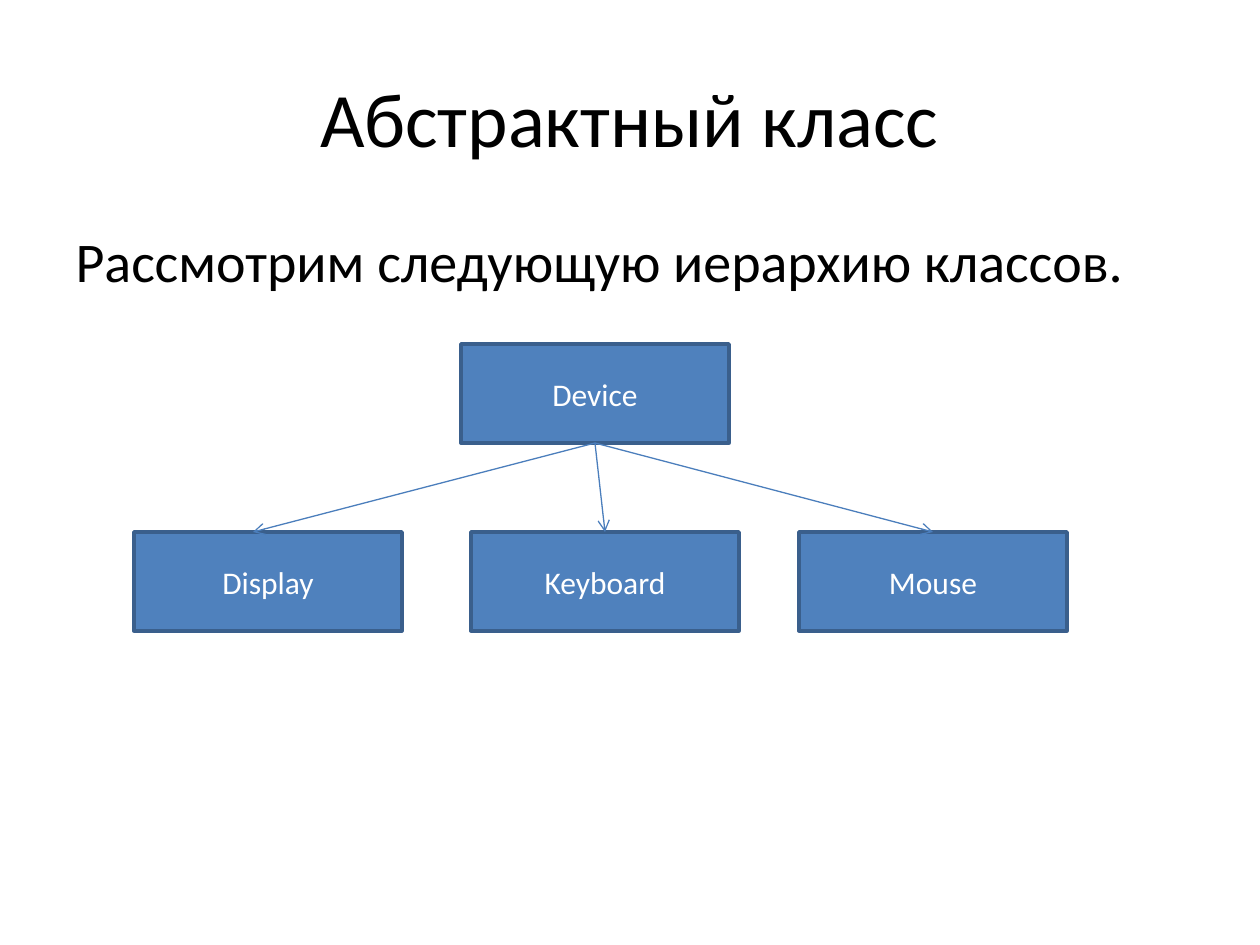
"""Build a slide with a small class hierarchy."""
from lxml import etree
from pptx import Presentation
from pptx import util as u
from pptx.dml.color import RGBColor
from pptx.enum import shapes, text
from pptx.oxml.ns import qn

EMU_PER_PX = u.Inches(1) / 126
COLORS = {"black": "000000", "white": "FFFFFF", "box": "4F81BD",
          "border": "3A5F8C", "arrow": "4B7EBC"}
BOX_W, BOX_H = 268, 99
CHILD_TOP = 532
CHILDREN = {"Mouse": 799, "Keyboard": 471, "Display": 134}
DISPLAY_ARROW_X = 253


def px(n):
    """Convert pixels to EMU."""
    return u.Emu(round(n * EMU_PER_PX))


def rgb(name):
    """Look up a named colour."""
    return RGBColor.from_string(COLORS[name])


def apply(obj, values):
    """Set attributes from a dict of format values."""
    for name, value in values.items():
        setattr(obj, name, value)


def write(sp, content, size, color, align, anchor):
    """Put one formatted paragraph into a shape and return it."""
    tf = sp.text_frame
    apply(tf, {"word_wrap": True, "vertical_anchor": anchor})
    p = tf.paragraphs[0]
    p.alignment = align
    r = p.add_run()
    r.text = content
    apply(r.font, {"size": u.Pt(size), "name": "Calibri"})
    r.font.color.rgb = rgb(color)
    return p


def place(sp, left, top, width, height):
    """Move and size a shape in pixels."""
    apply(sp, {"left": px(left), "top": px(top),
               "width": px(width), "height": px(height)})


def add_title(s, content):
    """Fill the title placeholder."""
    sp = s.shapes.title
    place(sp, 63, 38, 1134, 157)
    write(sp, content, 44, "black", text.PP_ALIGN.CENTER, text.MSO_ANCHOR.MIDDLE)


def add_body(s, content):
    """Fill the body placeholder with an unbulleted paragraph."""
    sp = s.placeholders[1]
    place(sp, 63, 220, 1134, 624)
    p = write(sp, content, 32, "black", text.PP_ALIGN.LEFT, text.MSO_ANCHOR.TOP)
    pPr = p._p.get_or_add_pPr()
    pPr.set("marL", str(px(47)))
    pPr.set("indent", str(-px(47)))
    etree.SubElement(pPr, qn("a:buNone"))


def add_box(s, label, left, top):
    """Add a class box."""
    sp = s.shapes.add_shape(shapes.MSO_SHAPE.RECTANGLE,
                            px(left), px(top), px(BOX_W), px(BOX_H))
    sp.shadow.inherit = False
    sp.fill.solid()
    sp.fill.fore_color.rgb = rgb("box")
    sp.line.color.rgb = rgb("border")
    sp.line.width = u.Pt(2)
    write(sp, label, 18, "white", text.PP_ALIGN.CENTER, text.MSO_ANCHOR.MIDDLE)
    return sp


def add_arrow(s, parent, child, end_x=None):
    """Link parent to child, ending at end_x or at the child's top middle."""
    c = s.shapes.add_connector(shapes.MSO_CONNECTOR.STRAIGHT, 0, 0,
                               px(end_x or 0), child.top)
    c.begin_connect(parent, 2)
    if end_x is None:
        c.end_connect(child, 0)
    c.line.color.rgb = rgb("arrow")
    c.line.width = u.Pt(0.75)
    etree.SubElement(c.line._get_or_add_ln(), qn("a:tailEnd"), type="arrow")
    etree.SubElement(c._element.spPr, qn("a:effectLst"))


def main():
    """Build and save the slide."""
    prs = Presentation()
    apply(prs, {"slide_width": u.Inches(10), "slide_height": u.Inches(7.5)})
    s = prs.slides.add_slide(prs.slide_layouts[1])
    add_title(s, "Абстрактный класс")
    add_body(s, "Рассмотрим следующую иерархию классов.")
    device = add_box(s, "Device", 461, 344)
    boxes = {label: add_box(s, label, left, CHILD_TOP)
             for label, left in CHILDREN.items()}
    add_arrow(s, device, boxes["Display"], DISPLAY_ARROW_X)
    for label in ("Keyboard", "Mouse"):
        add_arrow(s, device, boxes[label])
    prs.save("out.pptx")


if __name__ == "__main__":
    main()
